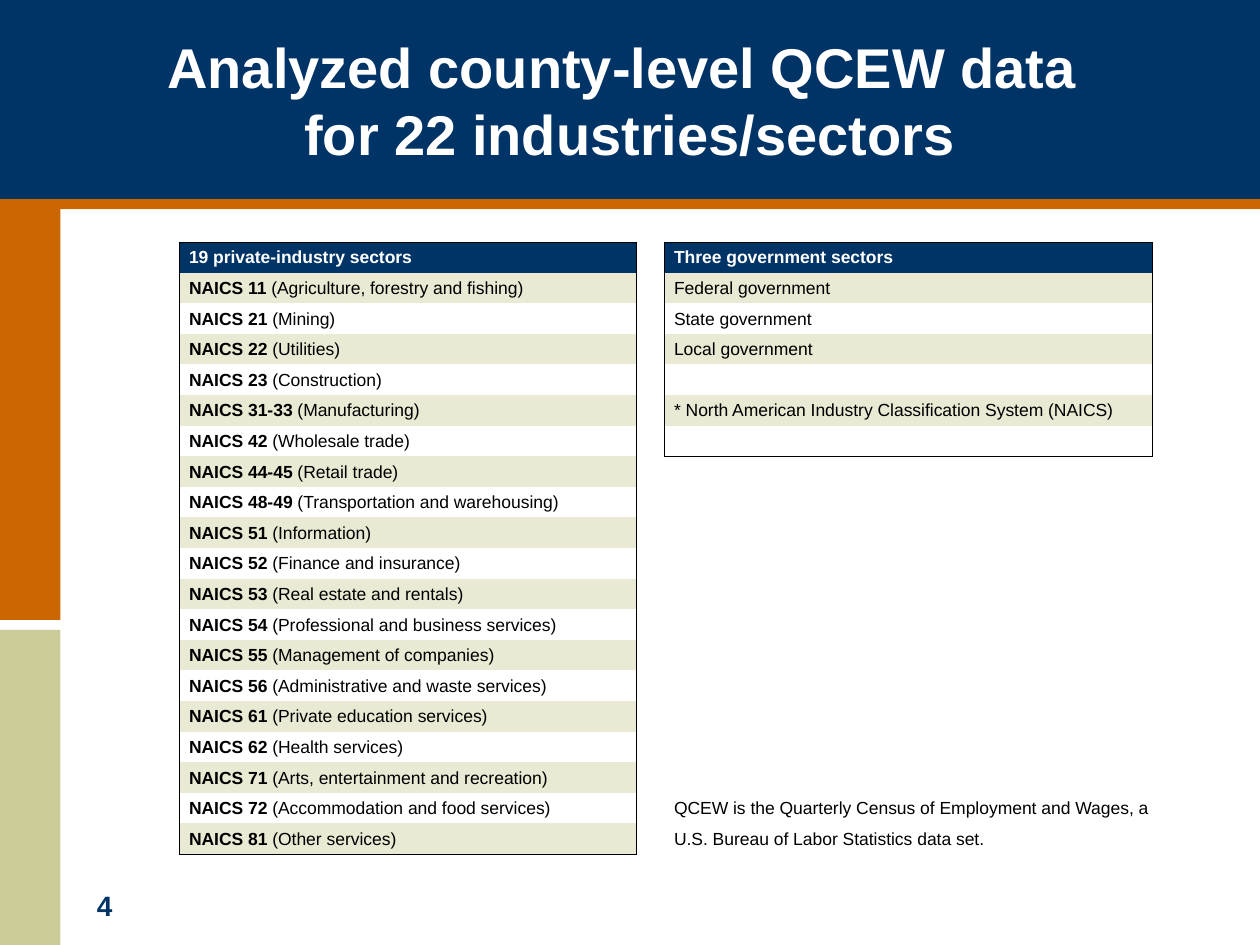
import pptx
import pptx.util
import pptx.dml.color
import pptx.enum.shapes
import pptx.enum.text
import pptx.oxml
import pptx.oxml.ns
from dataclasses import dataclass

Inches = pptx.util.Inches
Pt = pptx.util.Pt


@dataclass(frozen=True)
class Theme:
    font: str = "Arial"
    navy: str = "003366"
    rust: str = "CC6600"
    sage: str = "CCCC99"
    band: str = "EAE9D3"
    white: str = "FFFFFF"
    black: str = "000000"
    head: int = 32
    page: int = 16
    cell: int = 10
    blank: int = 6


THEME = Theme()

SECTORS = [
    ("11", "Agriculture, forestry and fishing"),
    ("21", "Mining"),
    ("22", "Utilities"),
    ("23", "Construction"),
    ("31-33", "Manufacturing"),
    ("42", "Wholesale trade"),
    ("44-45", "Retail trade"),
    ("48-49", "Transportation and warehousing"),
    ("51", "Information"),
    ("52", "Finance and insurance"),
    ("53", "Real estate and rentals"),
    ("54", "Professional and business services"),
    ("55", "Management of companies"),
    ("56", "Administrative and waste services"),
    ("61", "Private education services"),
    ("62", "Health services"),
    ("71", "Arts, entertainment and recreation"),
    ("72", "Accommodation and food services"),
    ("81", "Other services"),
]
NOTES = {
    1: "Federal government",
    2: "State government",
    3: "Local government",
    5: "* North American Industry Classification System (NAICS)",
    18: "QCEW is the Quarterly Census of Employment and Wages, a",
    19: "U.S. Bureau of Labor Statistics data set.",
}
WIDTHS = [3.63, 0.22, 3.88]
BODY = len(SECTORS) + 1
DEPTHS = {0: BODY, 2: 7}
SIDES = {"L": (0, -1), "R": (0, 1), "T": (-1, 0), "B": (1, 0)}


def tint(code):
    return pptx.dml.color.RGBColor.from_string(code)


def add_run(para, text, size, color, bold=False):
    run = para.add_run()
    run.text = text
    font = run.font
    font.name = THEME.font
    font.size = Pt(size)
    font.bold = bold
    font.color.rgb = tint(color)


def add_bar(slide, box, color):
    kind = pptx.enum.shapes.MSO_SHAPE.RECTANGLE
    bar = slide.shapes.add_shape(kind, *map(Inches, box))
    bar.shadow.inherit = False
    bar.fill.solid()
    bar.fill.fore_color.rgb = tint(color)
    bar.line.fill.background()


def add_title(slide, lines):
    title = slide.shapes.title
    title.left, title.top, title.width, title.height = map(Inches, (0, 0, 10, 1.58))
    title.element.getparent().append(title.element)
    frame = title.text_frame
    frame.word_wrap = True
    frame.auto_size = pptx.enum.text.MSO_AUTO_SIZE.NONE
    frame.vertical_anchor = pptx.enum.text.MSO_ANCHOR.MIDDLE
    para = frame.paragraphs[0]
    para.alignment = pptx.enum.text.PP_ALIGN.CENTER
    for index, line in enumerate(lines):
        if index:
            para.add_line_break()
        add_run(para, line, THEME.head, THEME.white, True)


def add_page(slide, text):
    box = slide.shapes.add_textbox(*map(Inches, (0.67, 7, 0.67, 0.37)))
    box.text_frame.word_wrap = True
    add_run(box.text_frame.paragraphs[0], text, THEME.page, THEME.navy, True)


def boxed(row, col):
    return 0 <= row < DEPTHS.get(col, 0)


def add_edge(cell, side, shown):
    props = cell._tc.get_or_add_tcPr()
    tag = f"a:ln{side}"
    edge = pptx.oxml.parse_xml(
        f'<{tag} {pptx.oxml.ns.nsdecls("a")} w="{Pt(0.5)}">'
        + (f'<a:solidFill><a:srgbClr val="{THEME.black}"/></a:solidFill>'
           if shown else "<a:noFill/>")
        + f"</{tag}>"
    )
    props.append(edge)


def style_cell(cell, row, col):
    cell.margin_left = Inches(0.08)
    cell.margin_right = cell.margin_top = Inches(0.01)
    cell.margin_bottom = 0
    cell.vertical_anchor = pptx.enum.text.MSO_ANCHOR.MIDDLE
    for side, (down, over) in SIDES.items():
        shown = boxed(row, col) != boxed(row + down, col + over)
        add_edge(cell, side, shown)
    if not boxed(row, col):
        cell.fill.background()
        return
    cell.fill.solid()
    color = THEME.band if row % 2 else THEME.white
    cell.fill.fore_color.rgb = tint(color if row else THEME.navy)


def cell_runs(row, col):
    if row == 0 and col != 1:
        text = ("19 private-industry sectors", "", "Three government sectors")[col]
        return [(text, THEME.white, True)]
    if col == 0 and row < BODY:
        code, name = SECTORS[row - 1]
        return [(f"NAICS {code}", THEME.black, True),
                (f" ({name})", THEME.black, False)]
    if col == 2 and row in NOTES:
        return [(NOTES[row], THEME.black, False)]
    return []


def add_grid(slide):
    frame = slide.shapes.add_table(
        BODY + 1, len(WIDTHS), *map(Inches, (1.42, 1.92, sum(WIDTHS), 5)))
    table = frame.table
    table.first_row = table.horz_banding = False
    for col, width in enumerate(WIDTHS):
        table.columns[col].width = Inches(width)
    for row in range(BODY + 1):
        table.rows[row].height = Inches(4.86 / BODY if row < BODY else 0.14)
        for col in range(len(WIDTHS)):
            cell = table.cell(row, col)
            style_cell(cell, row, col)
            para = cell.text_frame.paragraphs[0]
            runs = cell_runs(row, col)
            if not runs:
                para.font.size = Pt(THEME.blank)
            for text, color, bold in runs:
                add_run(para, text, THEME.cell, color, bold)


def main():
    deck = pptx.Presentation()
    deck.slide_width, deck.slide_height = Inches(10), Inches(7.5)
    slide = deck.slides.add_slide(deck.slide_layouts[5])
    add_bar(slide, (0, 0.5, 0.48, 4.42), THEME.rust)
    add_bar(slide, (0, 0, 10, 1.58), THEME.navy)
    add_bar(slide, (0, 5, 0.48, 2.5), THEME.sage)
    add_bar(slide, (0, 1.58, 10, 0.08), THEME.rust)
    add_page(slide, "4")
    add_title(slide, ["Analyzed county-level QCEW data ", "for 22 industries/sectors"])
    add_grid(slide)
    deck.save("out.pptx")


if __name__ == "__main__":
    main()
